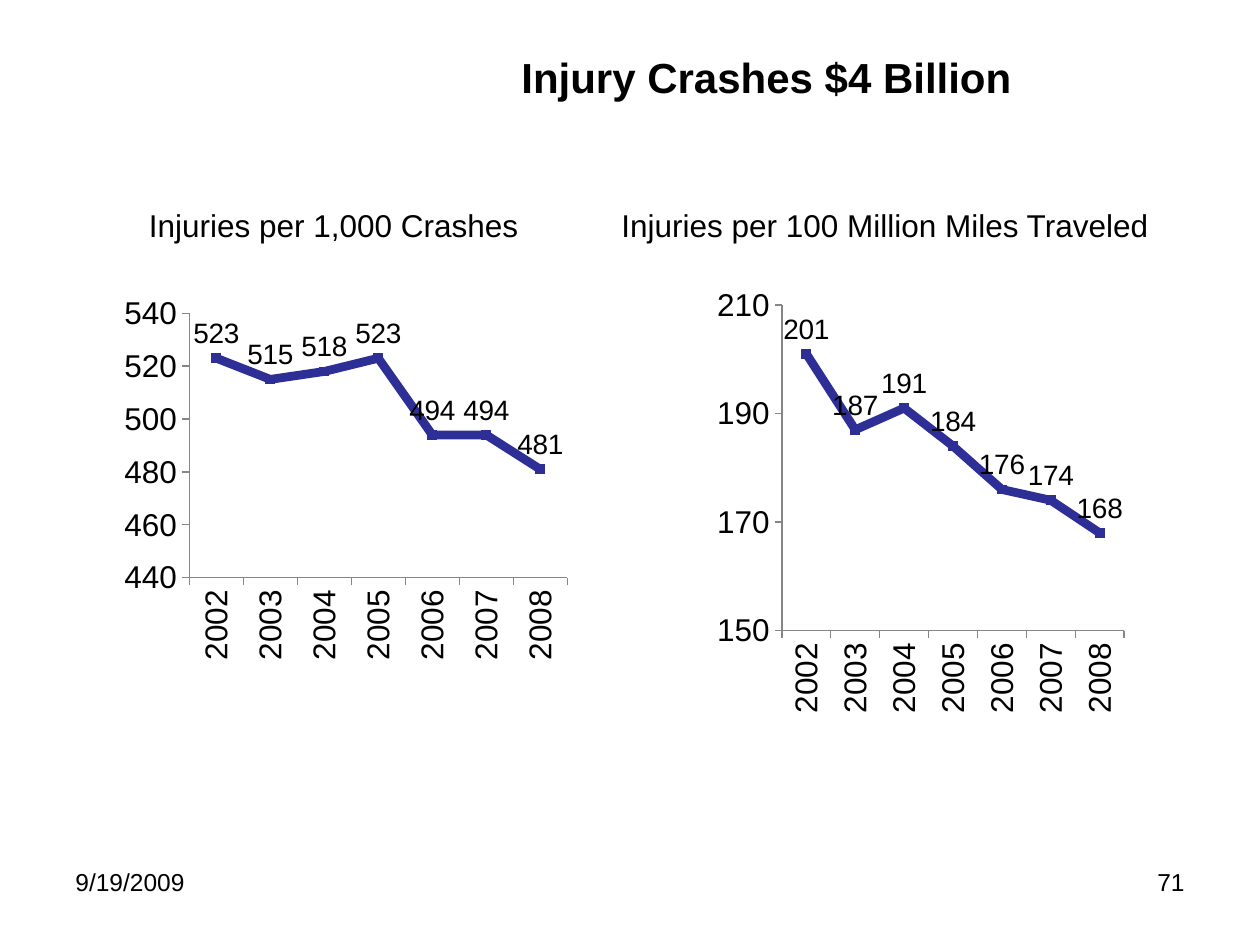
from pptx import Presentation
from pptx.chart.data import CategoryChartData
from pptx.dml.color import RGBColor
from pptx.enum.chart import XL_CHART_TYPE as ChartType, XL_LABEL_POSITION as LabelPosition
from pptx.enum.chart import XL_MARKER_STYLE as MarkerStyle, XL_TICK_MARK as TickMark
from pptx.enum.text import MSO_ANCHOR as Anchor, MSO_AUTO_SIZE as AutoSize, PP_ALIGN as Align
from pptx.oxml import parse_xml
from pptx.oxml.ns import nsdecls
from pptx.util import Pt

BLACK = RGBColor(0x00, 0x00, 0x00)
NAVY = RGBColor(0x2D, 0x2F, 0x96)
GRAY = RGBColor(0x86, 0x86, 0x86)
YEARS = [str(year) for year in range(2002, 2009)]


def set_font(font, size, bold=False):
    font.name = "Arial"
    font.size = Pt(size)
    font.bold = bold
    font.color.rgb = BLACK


presentation = Presentation()
presentation.slide_width = Pt(720)
presentation.slide_height = Pt(540)
slide = presentation.slides.add_slide(presentation.slide_layouts[5])

# Title
title = slide.shapes.title
title.left, title.top, title.width, title.height = Pt(192), Pt(18), Pt(492), Pt(52)
title.text_frame.text = "Injury Crashes $4 Billion"
title.text_frame.auto_size = AutoSize.NONE
title.text_frame.vertical_anchor = Anchor.MIDDLE
paragraph = title.text_frame.paragraphs[0]
paragraph.alignment = Align.CENTER
set_font(paragraph.font, 24, bold=True)

# Line charts: frame, plot area as shares of the frame, axis range, values
charts = [
    ((36, 144, 306, 252), (0.236, 0.139, 0.706, 0.6), (440, 540),
     (523, 515, 518, 523, 494, 494, 481)),
    ((396, 132, 258, 288), (0.197, 0.147, 0.758, 0.646), (150, 210),
     (201, 187, 191, 184, 176, 174, 168)),
]
for frame, plot_area, (minimum, maximum), values in charts:
    chart_data = CategoryChartData(number_format="0")
    chart_data.categories = YEARS
    chart_data.add_series("Series 1", values)
    chart = slide.shapes.add_chart(
        ChartType.LINE_MARKERS, *[Pt(length) for length in frame], chart_data).chart
    chart.has_legend = False
    chart.has_title = False
    set_font(chart.font, 18)

    # Inner plot area
    plot_xml = chart.plots[0]._element.getparent()
    for old_layout in plot_xml.findall("{*}layout"):
        plot_xml.remove(old_layout)
    sizes = "".join(f'<c:{tag} val="{share}"/>' for tag, share in zip("xywh", plot_area))
    plot_xml.insert(0, parse_xml(
        f'<c:layout {nsdecls("c")}><c:manualLayout><c:layoutTarget val="inner"/>'
        f'<c:xMode val="edge"/><c:yMode val="edge"/>{sizes}</c:manualLayout></c:layout>'))

    # Axes
    for axis in (chart.category_axis, chart.value_axis):
        axis.has_major_gridlines = False
        axis.major_tick_mark = TickMark.OUTSIDE
        axis.minor_tick_mark = TickMark.NONE
        axis.format.line.color.rgb = GRAY
        axis.format.line.width = Pt(0.75)
        set_font(axis.tick_labels.font, 18)
    chart.category_axis._element.find("{*}txPr/{*}bodyPr").set("rot", "-5400000")
    chart.value_axis.minimum_scale = minimum
    chart.value_axis.maximum_scale = maximum
    chart.value_axis.major_unit = 20
    chart.value_axis.tick_labels.number_format = "0"
    chart.value_axis.tick_labels.number_format_is_linked = False

    # Series and value labels
    plot = chart.plots[0]
    plot.vary_by_categories = False
    series = plot.series[0]
    series.smooth = False
    series.format.line.color.rgb = NAVY
    series.format.line.width = Pt(5)
    series.marker.style = MarkerStyle.SQUARE
    series.marker.size = 5
    series.marker.format.fill.solid()
    series.marker.format.fill.fore_color.rgb = NAVY
    series.marker.format.line.color.rgb = NAVY
    labels = series.data_labels
    labels.show_value = True
    labels.position = LabelPosition.ABOVE
    labels.number_format = "0"
    labels.number_format_is_linked = False
    set_font(labels.font, 16)

# Chart headings, date and page number
texts = [
    ("Injuries per 100 Million Miles Traveled", (348, 114, 318, 29), 18, Align.LEFT, False),
    ("Injuries per 1,000 Crashes", (78, 114, 264, 29), 18, Align.LEFT, True),
    ("9/19/2009", (36, 492, 168, 37.5), 14, Align.LEFT, True),
    ("71", (516, 492, 168, 37.5), 14, Align.RIGHT, True),
]
for text, frame, size, alignment, wrap in texts:
    text_frame = slide.shapes.add_textbox(*[Pt(length) for length in frame]).text_frame
    text_frame.word_wrap = wrap
    text_frame.text = text
    paragraph = text_frame.paragraphs[0]
    paragraph.alignment = alignment
    set_font(paragraph.font, size)

presentation.save("out.pptx")
